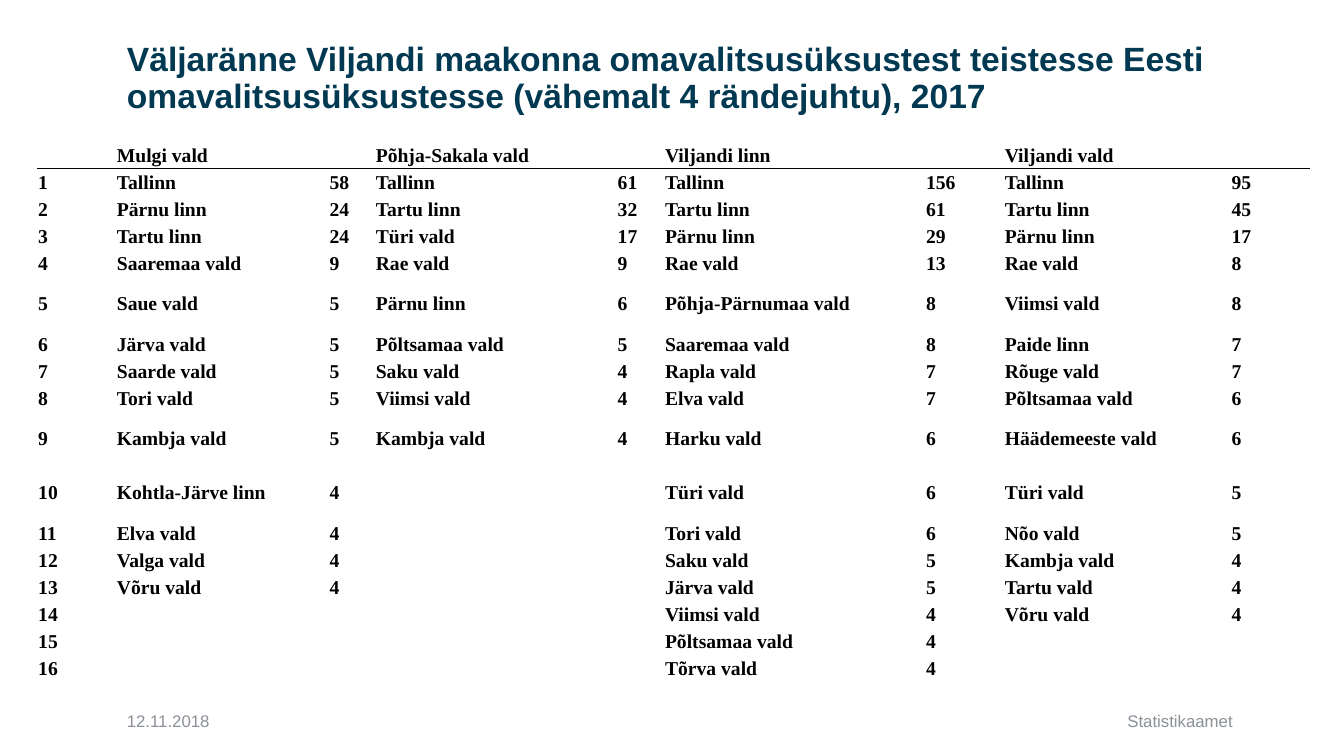
from dataclasses import dataclass

from lxml.etree import SubElement
from pptx import Presentation
from pptx.dml.color import RGBColor
from pptx.enum.text import MSO_ANCHOR, MSO_AUTO_SIZE, PP_ALIGN
from pptx.oxml.ns import qn
from pptx.util import Pt


@dataclass(frozen=True)
class Theme:
    heading_font: str = "Arial"
    table_font: str = "Times New Roman"
    title_color: str = "003951"
    footer_color: str = "8C9198"
    table_color: str = "000000"
    title_size: float = 24
    table_size: float = 14
    footer_size: float = 12
    rule_width: float = 0.5


# Destinations and numbers of movers for each municipality
MOVES = {
    "Mulgi vald": [
        ("Tallinn", 58), ("Pärnu linn", 24), ("Tartu linn", 24),
        ("Saaremaa vald", 9), ("Saue vald", 5), ("Järva vald", 5),
        ("Saarde vald", 5), ("Tori vald", 5), ("Kambja vald", 5),
        ("Kohtla-Järve linn", 4), ("Elva vald", 4), ("Valga vald", 4),
        ("Võru vald", 4),
    ],
    "Põhja-Sakala vald": [
        ("Tallinn", 61), ("Tartu linn", 32), ("Türi vald", 17),
        ("Rae vald", 9), ("Pärnu linn", 6), ("Põltsamaa vald", 5),
        ("Saku vald", 4), ("Viimsi vald", 4), ("Kambja vald", 4),
    ],
    "Viljandi linn": [
        ("Tallinn", 156), ("Tartu linn", 61), ("Pärnu linn", 29),
        ("Rae vald", 13), ("Põhja-Pärnumaa vald", 8), ("Saaremaa vald", 8),
        ("Rapla vald", 7), ("Elva vald", 7), ("Harku vald", 6),
        ("Türi vald", 6), ("Tori vald", 6), ("Saku vald", 5),
        ("Järva vald", 5), ("Viimsi vald", 4), ("Põltsamaa vald", 4),
        ("Tõrva vald", 4),
    ],
    "Viljandi vald": [
        ("Tallinn", 95), ("Tartu linn", 45), ("Pärnu linn", 17),
        ("Rae vald", 8), ("Viimsi vald", 8), ("Paide linn", 7),
        ("Rõuge vald", 7), ("Põltsamaa vald", 6), ("Häädemeeste vald", 6),
        ("Türi vald", 5), ("Nõo vald", 5), ("Kambja vald", 4),
        ("Tartu vald", 4), ("Võru vald", 4),
    ],
}
COL_WIDTHS = [56.2, 151.9, 33.1, 172.8, 33.8, 186.5, 56.2, 162, 56.2]
ROW_HEIGHT = 19.33
TALL_ROWS = {5, 9, 10}


def table_rows():
    """Header row, then one ranked row per place, padded with blanks."""
    rows = [[""]]
    for name in MOVES:
        rows[0] += [name, ""]
    for i in range(max(map(len, MOVES.values()))):
        row = [str(i + 1)]
        for moves in MOVES.values():
            row += map(str, moves[i]) if i < len(moves) else ("", "")
        rows.append(row)
    return rows


class SlideBuilder:
    def __init__(self, slide, theme):
        self.s = slide
        self.theme = theme

    def style(self, p, font, size, color, bold=False):
        p.font.name = font
        p.font.size = Pt(size)
        p.font.bold = bold
        p.font.color.rgb = RGBColor.from_string(color)

    def title(self, text, left, top, width, height):
        t, sp = self.theme, self.s.shapes.title
        sp.left, sp.top, sp.width, sp.height = map(Pt, (left, top, width, height))
        tf = sp.text_frame
        tf.text = text
        tf.auto_size = MSO_AUTO_SIZE.NONE
        tf.vertical_anchor = MSO_ANCHOR.MIDDLE
        p = tf.paragraphs[0]
        p.alignment = PP_ALIGN.LEFT
        p.line_spacing = 0.9
        self.style(p, t.heading_font, t.title_size, t.title_color, True)

    def footer(self, text, left, top, width, height, align=PP_ALIGN.LEFT):
        t = self.theme
        sp = self.s.shapes.add_textbox(*map(Pt, (left, top, width, height)))
        tf = sp.text_frame
        tf.word_wrap = True
        tf.vertical_anchor = MSO_ANCHOR.MIDDLE
        p = tf.paragraphs[0]
        p.text = text
        p.alignment = align
        self.style(p, t.heading_font, t.footer_size, t.footer_color)

    def rule(self, cell, edge):
        tc_pr = cell._tc.get_or_add_tcPr()
        ln = SubElement(tc_pr, qn(edge), w=str(Pt(self.theme.rule_width)))
        fill = SubElement(ln, qn("a:solidFill"))
        SubElement(fill, qn("a:srgbClr"), val=self.theme.table_color)

    def cell(self, cell, text):
        t = self.theme
        cell.margin_left = cell.margin_right = cell.margin_top = Pt(0.72)
        cell.margin_bottom = 0
        cell.vertical_anchor = MSO_ANCHOR.MIDDLE
        p = cell.text_frame.paragraphs[0]
        if text:
            p.text = text
        else:
            # Keeps blank cells from stretching their row
            p._p.get_or_add_endParaRPr().set("sz", str(t.table_size * 100))
        self.style(p, t.table_font, t.table_size, t.table_color, True)

    def table(self, rows, left, top):
        heights = [ROW_HEIGHT * (2 if i in TALL_ROWS else 1) for i in range(len(rows))]
        frame = self.s.shapes.add_table(
            len(rows), len(COL_WIDTHS),
            *map(Pt, (left, top, sum(COL_WIDTHS), sum(heights))))
        tbl = frame.table
        tbl.first_row = tbl.horz_banding = False
        for col, width in zip(tbl.columns, COL_WIDTHS):
            col.width = Pt(width)
        for i, (row, height) in enumerate(zip(rows, heights)):
            tbl.rows[i].height = Pt(height)
            for j, text in enumerate(row):
                cell = tbl.cell(i, j)
                self.cell(cell, text)
                # Line between the header and the first row
                if i < 2:
                    self.rule(cell, "a:lnT" if i else "a:lnB")
                cell.fill.background()


def main():
    prs = Presentation()
    prs.slide_width, prs.slide_height = Pt(960), Pt(540)
    b = SlideBuilder(prs.slides.add_slide(prs.slide_layouts[5]), Theme())

    # Title
    b.title("Väljaränne Viljandi maakonna omavalitsusüksustest teistesse Eesti "
            "omavalitsusüksustesse (vähemalt 4 rändejuhtu), 2017",
            83.5, 12.2, 804.2, 88.6)

    # Migration table
    b.table(table_rows(), 26.6, 101)

    # Date and source
    b.footer("12.11.2018", 83.5, 500.4, 198.7, 28.8)
    b.footer("Statistikaamet", 318.2, 500.4, 569.5, 28.8, PP_ALIGN.RIGHT)

    prs.save("out.pptx")


if __name__ == "__main__":
    main()
